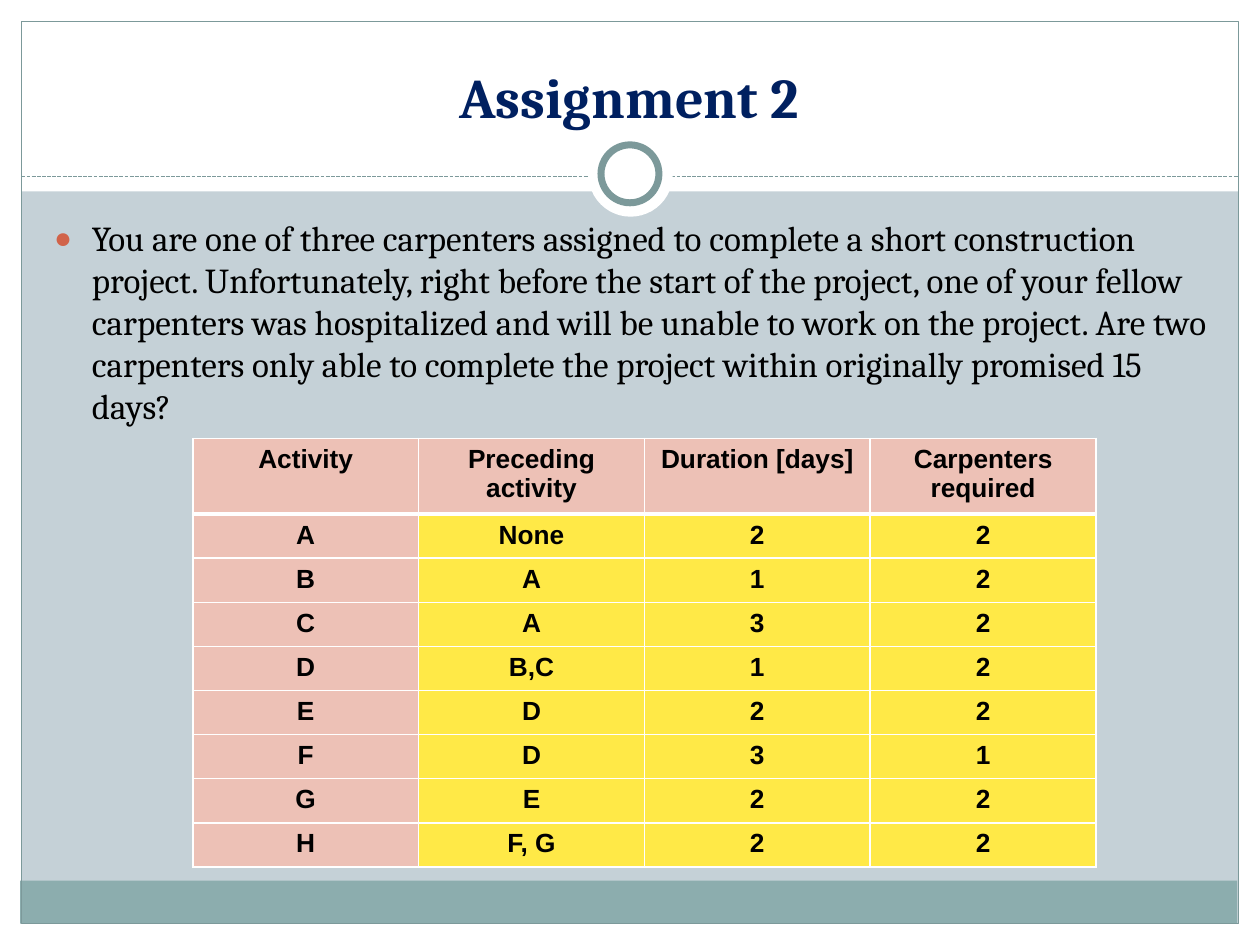
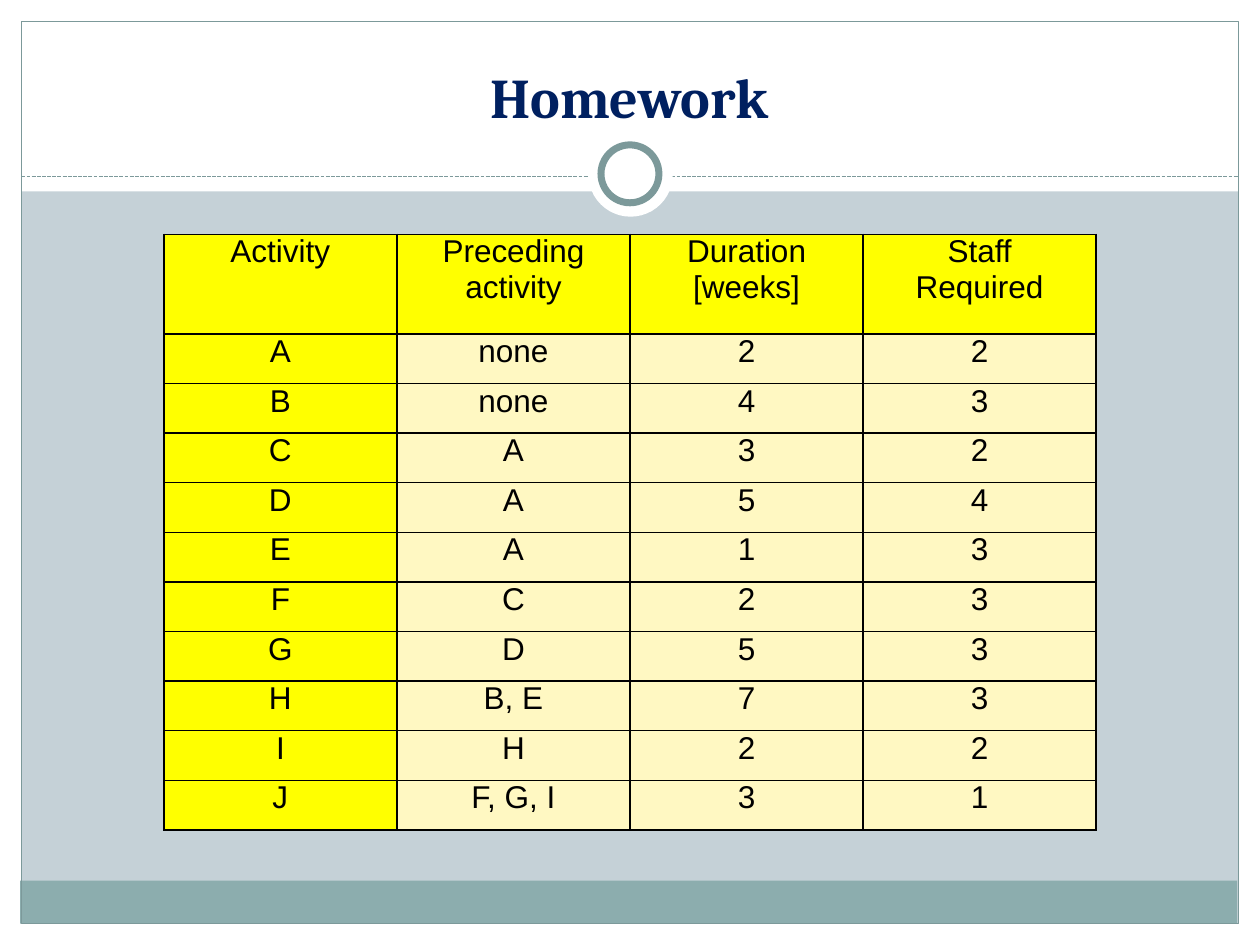
from dataclasses import dataclass

from lxml.etree import SubElement
from pptx import Presentation
from pptx.dml.color import RGBColor
from pptx.enum.dml import MSO_LINE
from pptx.enum.shapes import MSO_CONNECTOR, MSO_SHAPE
from pptx.enum.text import MSO_ANCHOR, MSO_AUTO_SIZE, PP_ALIGN
from pptx.oxml.ns import qn
from pptx.util import Emu, Pt

EMU_PER_PX = 9144  # 100 px to the inch

COLORS = {
    "background": "C5D1D7",
    "white": "FFFFFF",
    "black": "000000",
    "footer": "8CADAE",
    "rule": "7C999A",
    "title": "002060",
    "bullet": "D16349",
    "pink": "EDC1B6",
    "gold": "FFE947",
    "yellow": "FFFF00",
    "cream": "FFF8C2",
}


@dataclass(frozen=True)
class Area:
    left: int
    top: int
    width: int
    height: int


@dataclass(frozen=True)
class Band:
    area: Area
    fill: str | None = None
    line: str | None = None
    weight: float = 0.75
    kind: MSO_SHAPE = MSO_SHAPE.RECTANGLE


@dataclass(frozen=True)
class TableLook:
    area: Area
    header_height: int
    header_fill: str
    body_fill: str
    border: str
    header_rule: float
    size: int
    bold: bool
    side_inset: int
    top_inset: int


TITLE_AREA = Area(33, 25, 933, 83)
BODY_AREA = Area(33, 167, 936, 500)

BANDS = [
    Band(Area(0, 733, 1000, 17), "white"),
    Band(Area(0, 0, 1000, 152), "white"),
    Band(Area(0, 0, 17, 750), "white"),
    Band(Area(983, 0, 17, 750), "white"),
    Band(Area(16, 699, 966, 34), "footer"),
    Band(Area(17, 17, 966, 716), line="rule"),
]
RINGS = [
    Band(Area(467, 105, 67, 67), "white", kind=MSO_SHAPE.OVAL),
    Band(Area(477, 115, 46, 46), "white", "rule", 4, MSO_SHAPE.OVAL),
]

CARPENTER_LOOK = TableLook(
    Area(153, 348, 717, 340), 60, "pink", "gold", "white", 3, 15, True, 10, 5)
STAFF_LOOK = TableLook(
    Area(130, 186, 740, 473), 79, "yellow", "cream", "black", 1, 18, False, 5, 0)

CARPENTER_ROWS = [
    ("Activity", "Preceding activity", "Duration [days]", "Carpenters required"),
    ("A", "None", "2", "2"),
    ("B", "A", "1", "2"),
    ("C", "A", "3", "2"),
    ("D", "B,C", "1", "2"),
    ("E", "D", "2", "2"),
    ("F", "D", "3", "1"),
    ("G", "E", "2", "2"),
    ("H", "F, G", "2", "2"),
]
STAFF_ROWS = [
    ("Activity", "Preceding activity", "Duration [weeks]", "Staff\nRequired"),
    ("A", "none", "2", "2"),
    ("B", "none", "4", "3"),
    ("C", "A", "3", "2"),
    ("D", "A", "5", "4"),
    ("E", "A", "1", "3"),
    ("F", "C", "2", "3"),
    ("G", "D", "5", "3"),
    ("H", "B, E", "7", "3"),
    ("I", "H", "2", "2"),
    ("J", "F, G, I", "3", "1"),
]

PROBLEM = (
    "You are one of three carpenters assigned to complete a short construction "
    "project. Unfortunately, right before the start of the project, one of your "
    "fellow carpenters was hospitalized and will be unable to work on the project. "
    "Are two carpenters only able to complete the project within originally "
    "promised 15 days?"
)


def px(length: float) -> Emu:
    return Emu(round(length * EMU_PER_PX))


def rgb(name: str) -> RGBColor:
    return RGBColor.from_string(COLORS[name])


def place(area: Area) -> tuple[Emu, Emu, Emu, Emu]:
    return px(area.left), px(area.top), px(area.width), px(area.height)


def write(frame, text: str, *, font: str, size: int, color: str = "black",
          bold: bool = False, align=PP_ALIGN.CENTER, bullet: bool = False) -> None:
    """Fill a text frame, one paragraph for each line of the text."""
    for index, line in enumerate(text.split("\n")):
        para = frame.add_paragraph() if index else frame.paragraphs[0]
        if bullet:
            add_bullet(para)
        para.alignment = align
        para.space_before = Pt(0)
        span = para.add_run()
        span.text = line
        span.font.name = font
        span.font.size = Pt(size)
        span.font.bold = bold
        span.font.color.rgb = rgb(color)


def add_bullet(para) -> None:
    props = para._p.get_or_add_pPr()
    props.set("marL", str(px(30)))
    props.set("indent", str(px(-30)))
    tint = SubElement(props, qn("a:buClr"))
    SubElement(tint, qn("a:srgbClr"), val=COLORS["bullet"])
    SubElement(props, qn("a:buSzPct"), val="85000")
    SubElement(props, qn("a:buFont"), typeface="Arial")
    SubElement(props, qn("a:buChar"), char="●")


def draw_band(page, band: Band) -> None:
    shape = page.shapes.add_shape(band.kind, *place(band.area))
    shape.shadow.inherit = False
    if band.fill:
        shape.fill.solid()
        shape.fill.fore_color.rgb = rgb(band.fill)
    else:
        shape.fill.background()
    if band.line:
        shape.line.color.rgb = rgb(band.line)
        shape.line.width = Pt(band.weight)
    else:
        shape.line.fill.background()


def draw_divider(page) -> None:
    divider = page.shapes.add_connector(
        MSO_CONNECTOR.STRAIGHT, px(17), px(140), px(983), px(140))
    divider.line.color.rgb = rgb("rule")
    divider.line.width = Pt(0.75)
    divider.line.dash_style = MSO_LINE.SQUARE_DOT
    SubElement(divider._element.spPr, qn("a:effectLst"))


def fit_placeholder(page, holder, area: Area, anchor):
    """Move a placeholder to its area, in front of the bands."""
    page.shapes.element.append(holder.element)
    holder.left, holder.top, holder.width, holder.height = place(area)
    frame = holder.text_frame
    frame.word_wrap = True
    frame.auto_size = MSO_AUTO_SIZE.NONE
    frame.vertical_anchor = anchor
    return frame


def add_page(deck, layout: int, title: str):
    page = deck.slides.add_slide(deck.slide_layouts[layout])
    page.background.fill.solid()
    page.background.fill.fore_color.rgb = rgb("background")
    for band in BANDS:
        draw_band(page, band)
    draw_divider(page)
    for ring in RINGS:
        draw_band(page, ring)
    frame = fit_placeholder(page, page.shapes.title, TITLE_AREA, MSO_ANCHOR.BOTTOM)
    write(frame, title, font="Cambria", size=32, color="title", bold=True)
    return page


def set_border(cell, side: str, color: str, weight: float) -> None:
    props = cell._tc.get_or_add_tcPr()
    line = SubElement(props, qn(f"a:ln{side}"), w=str(Pt(weight)))
    fill = SubElement(line, qn("a:solidFill"))
    SubElement(fill, qn("a:srgbClr"), val=COLORS[color])


def draw_table(page, rows: list[tuple[str, ...]], look: TableLook) -> None:
    columns = len(rows[0])
    table = page.shapes.add_table(len(rows), columns, *place(look.area)).table
    table.horz_banding = False
    row_height = (look.area.height - look.header_height) / (len(rows) - 1)
    for column in table.columns:
        column.width = px(look.area.width / columns)
    for r, texts in enumerate(rows):
        table.rows[r].height = px(row_height if r else look.header_height)
        for c, text in enumerate(texts):
            cell = table.cell(r, c)
            cell.margin_left = cell.margin_right = px(look.side_inset)
            cell.margin_top = cell.margin_bottom = px(look.top_inset)
            top = look.header_rule if r == 1 else 1
            bottom = look.header_rule if r == 0 else 1
            for side, weight in zip("LRTB", (1, 1, top, bottom)):
                set_border(cell, side, look.border, weight)
            cell.fill.solid()
            is_header = r == 0 or c == 0
            cell.fill.fore_color.rgb = rgb(
                look.header_fill if is_header else look.body_fill)
            write(cell.text_frame, text, font="Arial", size=look.size, bold=look.bold)


def main() -> None:
    deck = Presentation()
    deck.slide_width, deck.slide_height = px(1000), px(750)

    # Assignment with the carpenters' activities
    page = add_page(deck, 1, "Assignment 2")
    frame = fit_placeholder(page, page.placeholders[1], BODY_AREA, MSO_ANCHOR.TOP)
    write(frame, PROBLEM, font="Cambria", size=20, align=PP_ALIGN.LEFT, bullet=True)
    draw_table(page, CARPENTER_ROWS, CARPENTER_LOOK)

    # Homework with the staff activities
    page = add_page(deck, 5, "Homework")
    draw_table(page, STAFF_ROWS, STAFF_LOOK)

    deck.save("out.pptx")


if __name__ == "__main__":
    main()
